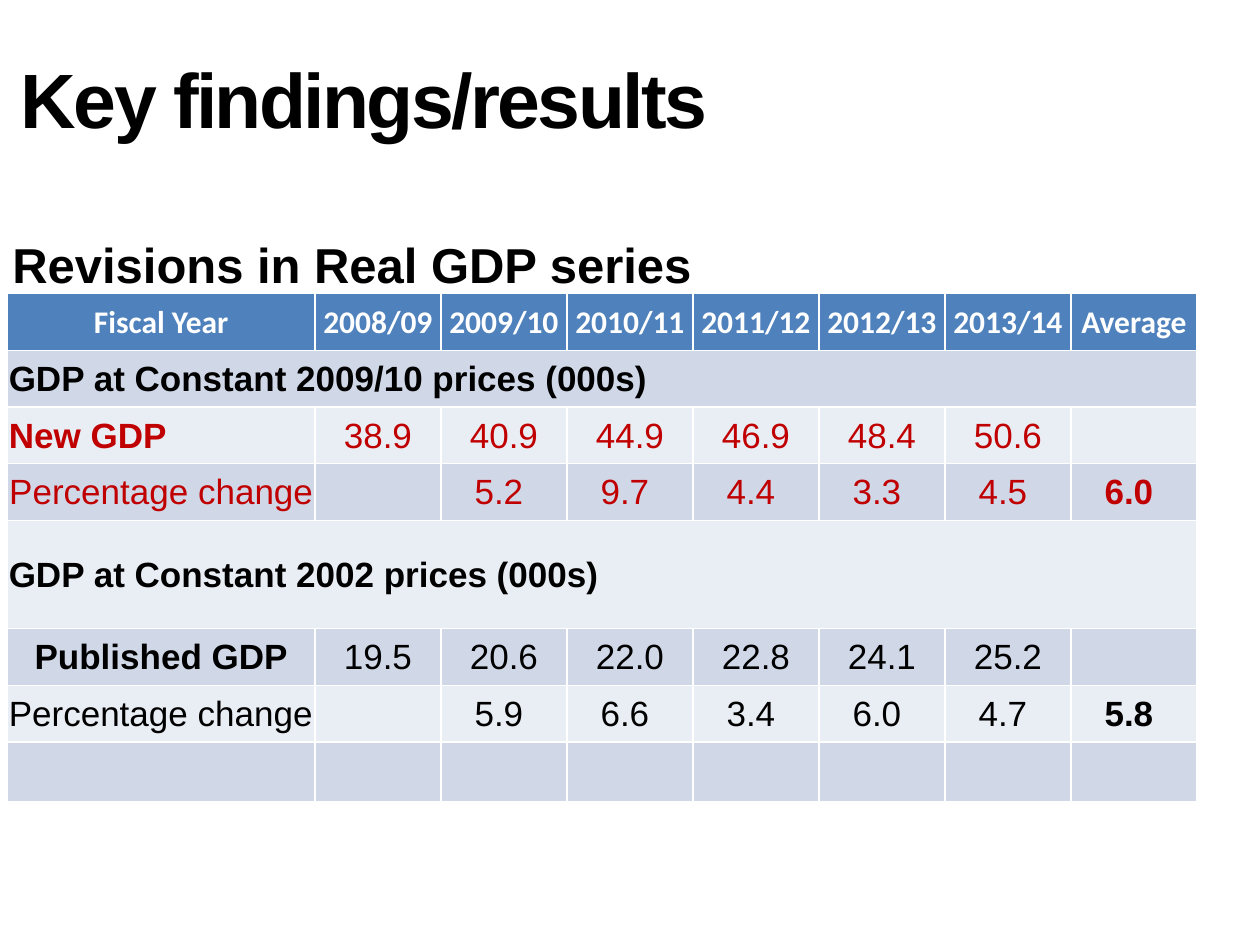
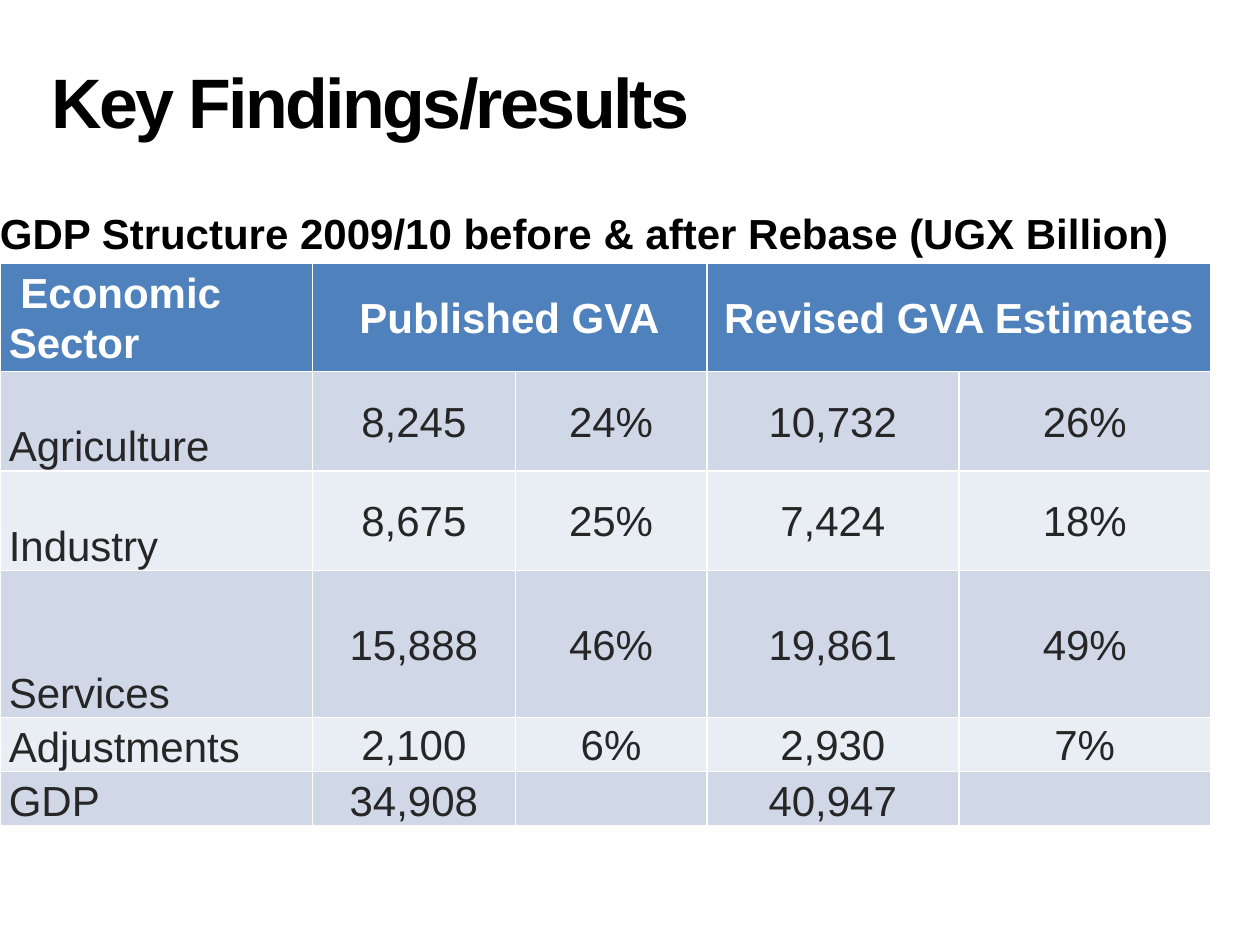
from pptx import Presentation
from pptx import util as u
from pptx.dml.color import RGBColor
from pptx.enum import text

BLACK, WHITE, RED, DARK = "000000", "FFFFFF", "C00000", "262626"
HEADER, BANDS = "4F81BD", ("D0D8E8", "E9EDF4")
LEFT, CENTER = text.PP_ALIGN.LEFT, text.PP_ALIGN.CENTER
MIDDLE, BOTTOM = text.MSO_ANCHOR.MIDDLE, text.MSO_ANCHOR.BOTTOM
hue = RGBColor.from_string

deck = Presentation()
deck.slide_width, deck.slide_height = u.Inches(10), u.Inches(7.5)
column, row = deck.slide_width / 10, deck.slide_height / 7.5


def write(para, words, size, color, bold, align, face="Arial"):
    para.alignment = align
    span = para.add_run()
    span.text = words
    span.font.name, span.font.size = face, u.Pt(size)
    span.font.bold, span.font.color.rgb = bold, hue(color)
    return span


def add_heading(page, place, words, size, align, side, below):
    left, top, width, height = place
    box = page.shapes.add_textbox(int(left * column), int(top * row),
                                  int(width * column), int(height * row))
    frame = box.text_frame
    frame.word_wrap = True
    frame.vertical_anchor = BOTTOM
    frame.margin_left = frame.margin_right = int(side * column)
    frame.margin_top, frame.margin_bottom = 0, int(below * row)
    return write(frame.paragraphs[0], words, size, BLACK, True, align)


growth = dict(
    title=("Key findings/results", 44, (0, 0.32, 5.78, 1.27), 0.45),
    subtitle=("Revisions in Real GDP series", 28, (0, 1.8, 9.5, 0.57), 0.1, 0.04),
    corner=(0.06, 2.33),
    columns=[2.44] + [1] * 7,
    rows=[0.45] * 4 + [0.86] + [0.45] * 2 + [0.47],
    merges=[(1, 0, 7), (4, 0, 7)],
    margins=(0.01, 0.01, 0.01, 0),
    header=(18, "Calibri"), size=20, spacing=1,
    colors=[BLACK, RED, RED, BLACK, BLACK, BLACK, BLACK],
    bold_cells={(1, 0), (2, 0), (3, 7), (4, 0), (5, 0), (6, 7)},
    centered_labels={0, 3, 5}, label_anchor=MIDDLE, low_rows=(),
    shifted_rows=(3, 6),
    cells=[
        ["Fiscal Year", "2008/09", "2009/10", "2010/11", "2011/12", "2012/13", "2013/14", "Average"],
        ["GDP at Constant 2009/10 prices (000s)"],
        ["New GDP", "38.9", "40.9", "44.9", "46.9", "48.4", "50.6"],
        ["Percentage change", "", "5.2", "9.7", "4.4", "3.3", "4.5", "6.0"],
        ["GDP at Constant 2002 prices (000s)"],
        ["Published GDP", "19.5", "20.6", "22.0", "22.8", "24.1", "25.2"],
        ["Percentage change", "", "5.9", "6.6", "3.4", "6.0", "4.7", "5.8"],
        [],
    ],
)

structure = dict(
    title=("Key Findings/results", 40, (0, 0.3, 5.88, 0.85), 0.02),
    subtitle=("GDP Structure 2009/10 before & after Rebase (UGX Billion)", 24,
              (0, 1.62, 9.6, 0.8), 0, 0.37),
    corner=(0, 2.09),
    columns=[2.48, 1.61, 1.52, 2, 2],
    rows=[0.79] * 3 + [1.17] + [0.41] * 2,
    merges=[(0, 1, 2), (0, 3, 4)],
    margins=(0.07, 0, 0.07, 0),
    header=(24, "Arial"), size=24, spacing=1.07,
    colors=[DARK] * 5,
    bold_cells=set(),
    centered_labels=set(), label_anchor=BOTTOM, low_rows=(5,),
    shifted_rows=(),
    cells=[
        ["\N{NO-BREAK SPACE}Economic Sector", "Published GVA", "", "Revised GVA Estimates"],
        ["Agriculture", "8,245", "24%", "10,732", "26%"],
        ["Industry", "8,675", "25%", "7,424", "18%"],
        ["Services", "15,888", "46%", "19,861", "49%"],
        ["Adjustments", "2,100", "6%", "2,930", "7%"],
        ["GDP", "34,908", "", "40,947"],
    ],
)

for topic in (growth, structure):
    page = deck.slides.add_slide(deck.slide_layouts[6])
    words, size, place, below = topic["title"]
    span = add_heading(page, place, words, size, CENTER, 0.1, below)
    span.font._element.set("spc", "-150")

    widths, heights = topic["columns"], topic["rows"]
    left, top = topic["corner"]
    table = page.shapes.add_table(
        len(heights), len(widths), int(left * column), int(top * row),
        int(sum(widths) * column), int(sum(heights) * row)).table
    for index, width in enumerate(widths):
        table.columns[index].width = int(width * column)
    for index, height in enumerate(heights):
        table.rows[index].height = int(height * row)
    for line, first, last in topic["merges"]:
        table.cell(line, first).merge(table.cell(line, last))

    for line, entries in enumerate(topic["cells"]):
        for index in range(len(widths)):
            cell = table.cell(line, index)
            cell.fill.solid()
            cell.fill.fore_color.rgb = hue(HEADER if line == 0 else BANDS[(line - 1) % 2])
            margins = [int(gap * column) for gap in topic["margins"]]
            cell.margin_left, cell.margin_top, cell.margin_right, cell.margin_bottom = margins
            label = index == 0
            cell.vertical_anchor = MIDDLE
            if line and label or line in topic["low_rows"]:
                cell.vertical_anchor = topic["label_anchor"]
            if line in topic["shifted_rows"] and not label:
                cell.margin_right = int(0.09 * column)
            if index >= len(entries) or not entries[index]:
                continue
            para = cell.text_frame.paragraphs[0]
            para.line_spacing = topic["spacing"]
            align = LEFT if label and line not in topic["centered_labels"] else CENTER
            if line == 0:
                size, face = topic["header"]
                write(para, entries[index], size, WHITE, True, align, face)
            else:
                bold = (line, index) in topic["bold_cells"]
                write(para, entries[index], topic["size"], topic["colors"][line - 1], bold, align)

    words, size, place, side, below = topic["subtitle"]
    add_heading(page, place, words, size, LEFT, side, below)

deck.save("out.pptx")
